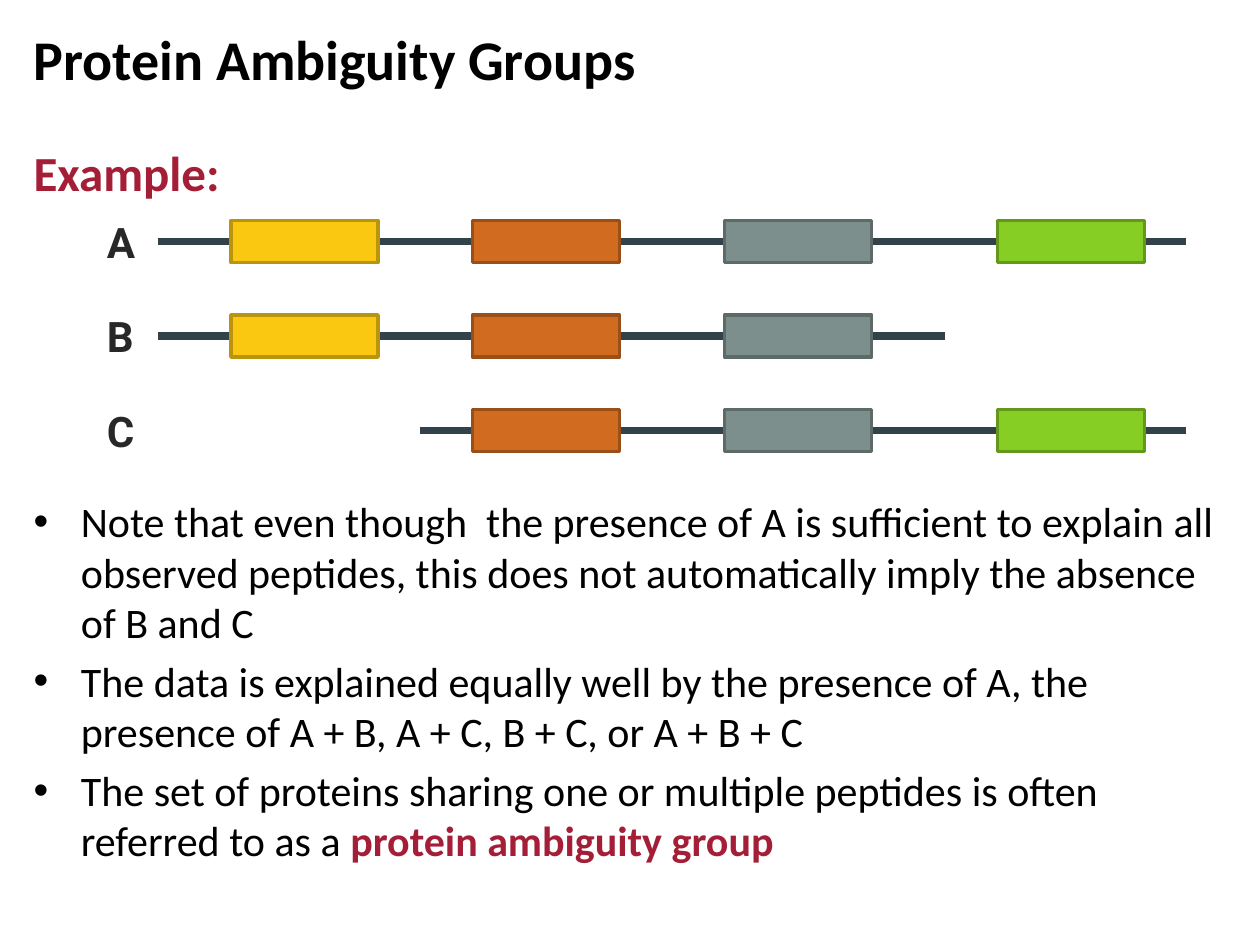
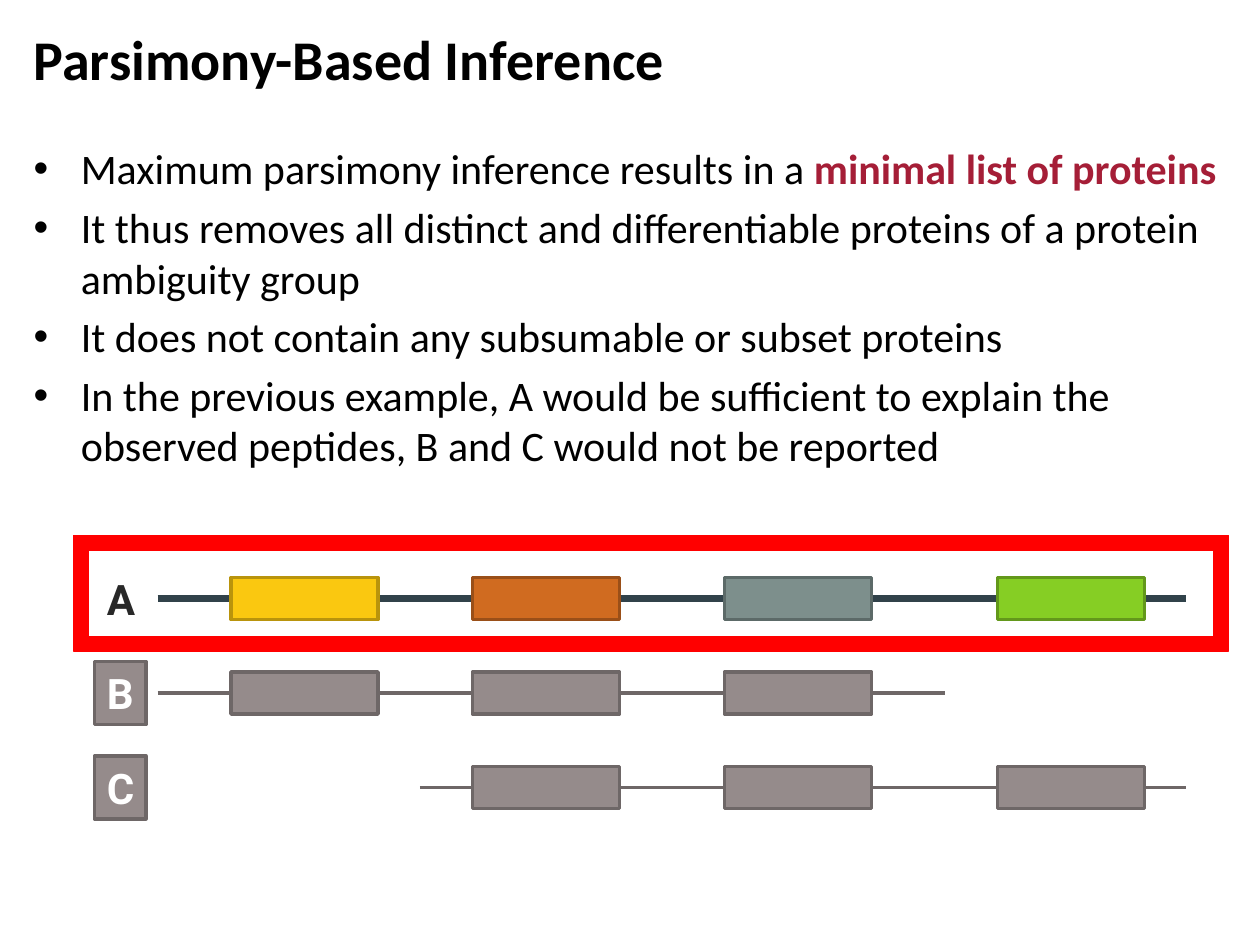
"""Build two slides on protein ambiguity groups and parsimony."""
import dataclasses

import lxml.etree
import pptx
import pptx.dml.color
import pptx.enum.shapes
import pptx.enum.text
import pptx.oxml.ns
import pptx.util

EMU_PER_PX = 7620
ROW_PITCH = 90
PEPTIDE_WIDTH, PEPTIDE_HEIGHT = 140, 40
LABEL_LEFT, LABEL_WIDTH, LABEL_HEIGHT = 90, 49, 60


@dataclasses.dataclass(frozen=True)
class Theme:
    """Colours, fonts and type sizes shared by the slides."""
    body_font: str = "Calibri"
    label_font: str = "Roboto"
    title_size: int = 32
    heading_size: int = 28
    text_size: int = 24
    text: str = "000000"
    accent: str = "A51E37"
    label: str = "282828"
    label_muted: str = "FFFFFF"
    chain: str = "31424A"
    chain_width: float = 4.5
    outline_width: float = 2
    muted: tuple = ("958B8B", "6E6767")
    highlight: str = "FF0000"


@dataclasses.dataclass(frozen=True)
class Peptide:
    """A peptide's column position, fill and outline."""
    left: int
    fill: str
    outline: str


@dataclasses.dataclass(frozen=True)
class Protein:
    """A protein's name, chain extent and peptides."""
    name: str
    start: int
    end: int
    peptides: tuple


THEME = Theme()
YELLOW = Peptide(220, "FAC810", "B9940C")
ORANGE = Peptide(450, "D06B20", "9A4F18")
GREY = Peptide(690, "7D8F8C", "5C6A68")
GREEN = Peptide(950, "86CE24", "63981B")
PROTEINS = (
    Protein("A", 150, 1130, (YELLOW, ORANGE, GREY, GREEN)),
    Protein("B", 150, 900, (YELLOW, ORANGE, GREY)),
    Protein("C", 400, 1130, (ORANGE, GREY, GREEN)),
)


def px(*lengths):
    """Turn px lengths into a list of EMU."""
    return [pptx.util.Emu(length * EMU_PER_PX) for length in lengths]


def rgb(value):
    """Return the colour object for a hex value."""
    return pptx.dml.color.RGBColor.from_string(value)


def add_span(para, text, *, size=THEME.text_size, color=THEME.text,
             bold=False, font=THEME.body_font):
    """Append formatted text to a paragraph."""
    span = para.add_run()
    span.text = text
    span.font.size = pptx.util.Pt(size)
    span.font.color.rgb = rgb(color)
    span.font.bold = bold
    span.font.name = font


def place(shape, left, top, width, height):
    """Move and size a shape."""
    shape.left, shape.top, shape.width, shape.height = px(left, top, width, height)


def add_page(deck, title):
    """Add a titled slide and return it with its body placeholder."""
    page = deck.slides.add_slide(deck.slide_layouts[1])
    box, body = page.shapes.title, page.placeholders[1]
    place(box, 20, 10, 880, 90)
    box.text_frame.vertical_anchor = pptx.enum.text.MSO_ANCHOR.MIDDLE
    para = box.text_frame.paragraphs[0]
    para.alignment = pptx.enum.text.PP_ALIGN.LEFT
    add_span(para, title, size=THEME.title_size, bold=True)
    place(body, 20, 130, 1160, 720)
    for frame in (box.text_frame, body.text_frame):
        frame.auto_size = pptx.enum.text.MSO_AUTO_SIZE.NONE
    return page, body


def next_para(body):
    """Return the body's empty first paragraph or a new one."""
    first = body.text_frame.paragraphs[0]
    return body.text_frame.add_paragraph() if first.runs else first


def add_heading(body, text):
    """Add an accented line without a bullet."""
    para = next_para(body)
    add_span(para, text, size=THEME.heading_size, color=THEME.accent, bold=True)
    properties = para._p.get_or_add_pPr()
    properties.set("marL", "0")
    properties.set("indent", "0")
    lxml.etree.SubElement(properties, pptx.oxml.ns.qn("a:buNone"))


def add_bullet(body, text, key_term="", space_before=None):
    """Add a bullet that may end in an accented key term."""
    para = next_para(body)
    add_span(para, text)
    if key_term:
        add_span(para, key_term, color=THEME.accent, bold=True)
    if space_before is not None:
        para.space_before = pptx.util.Pt(space_before)


def add_chain(page, start, end, level, color, width):
    """Draw a horizontal protein chain."""
    line = page.shapes.add_connector(
        pptx.enum.shapes.MSO_CONNECTOR.STRAIGHT, *px(start, level, end, level))
    line.line.color.rgb = rgb(color)
    line.line.width = pptx.util.Pt(width)
    lxml.etree.SubElement(line._element.spPr, pptx.oxml.ns.qn("a:effectLst"))


def add_block(page, kind, bounds, fill, outline, width=THEME.outline_width):
    """Draw a filled and outlined preset shape."""
    block = page.shapes.add_shape(kind, *px(*bounds))
    block.shadow.inherit = False
    block.fill.solid()
    block.fill.fore_color.rgb = rgb(fill)
    block.line.color.rgb = rgb(outline)
    block.line.width = pptx.util.Pt(width)
    return block


def add_label(page, name, level, muted):
    """Write a protein's name, in a grey box when muted."""
    bounds = (LABEL_LEFT, level - LABEL_HEIGHT // 2, LABEL_WIDTH, LABEL_HEIGHT)
    if muted:
        box = add_block(page, pptx.enum.shapes.MSO_SHAPE.RECTANGLE, bounds, *THEME.muted)
    else:
        box = page.shapes.add_textbox(*px(*bounds))
    frame = box.text_frame
    frame.word_wrap = False
    frame.auto_size = pptx.enum.text.MSO_AUTO_SIZE.SHAPE_TO_FIT_TEXT
    frame.vertical_anchor = pptx.enum.text.MSO_ANCHOR.TOP
    para = frame.paragraphs[0]
    para.alignment = pptx.enum.text.PP_ALIGN.RIGHT
    add_span(para, name, font=THEME.label_font, bold=True,
             color=THEME.label_muted if muted else THEME.label)


def add_protein(page, protein, level, muted):
    """Draw a protein's chain, name and peptides."""
    if muted:
        add_chain(page, protein.start, protein.end, level,
                  THEME.muted[1], THEME.outline_width)
    else:
        add_chain(page, protein.start, protein.end, level,
                  THEME.chain, THEME.chain_width)
    add_label(page, protein.name, level, muted)
    for peptide in protein.peptides:
        colors = THEME.muted if muted else (peptide.fill, peptide.outline)
        bounds = (peptide.left, level - PEPTIDE_HEIGHT // 2,
                  PEPTIDE_WIDTH, PEPTIDE_HEIGHT)
        add_block(page, pptx.enum.shapes.MSO_SHAPE.RECTANGLE, bounds, *colors)


def add_proteins(page, first_level, muted_names=""):
    """Draw all proteins in equally spaced rows."""
    for row, protein in enumerate(PROTEINS):
        add_protein(page, protein, first_level + row * ROW_PITCH,
                    protein.name in muted_names)


def build_ambiguity_page(deck):
    """Build the slide on protein ambiguity groups."""
    page, body = add_page(deck, "Protein Ambiguity Groups")
    add_heading(body, "Example:")
    add_bullet(body, "Note that even though  the presence of A is sufficient to explain "
               "all observed peptides, this does not automatically imply the absence "
               "of B and C", space_before=168)
    add_bullet(body, "The data is explained equally well by the presence of A, the "
               "presence of A + B, A + C, B + C, or A + B + C")
    add_bullet(body, "The set of proteins sharing one or multiple peptides is often "
               "referred to as a ", "protein ambiguity group")
    add_proteins(page, 230)


def build_parsimony_page(deck):
    """Build the slide on parsimony-based inference."""
    page, body = add_page(deck, "Parsimony-Based Inference")
    add_bullet(body, "Maximum parsimony inference results in a ",
               "minimal list of proteins")
    add_bullet(body, "It thus removes all distinct and differentiable proteins of a "
               "protein ambiguity group")
    add_bullet(body, "It does not contain any subsumable or subset proteins")
    add_bullet(body, "In the previous example, A would be sufficient to explain the "
               "observed peptides, B and C would not be reported")
    add_proteins(page, 570, muted_names="BC")
    add_block(page, pptx.enum.shapes.MSO_SHAPE.FRAME, (70, 510, 1100, 110),
              THEME.highlight, THEME.highlight, width=0.75)


def main():
    """Build and save the deck."""
    deck = pptx.Presentation()
    deck.slide_width, deck.slide_height = px(1200, 900)
    build_ambiguity_page(deck)
    build_parsimony_page(deck)
    deck.save("out.pptx")


if __name__ == "__main__":
    main()
